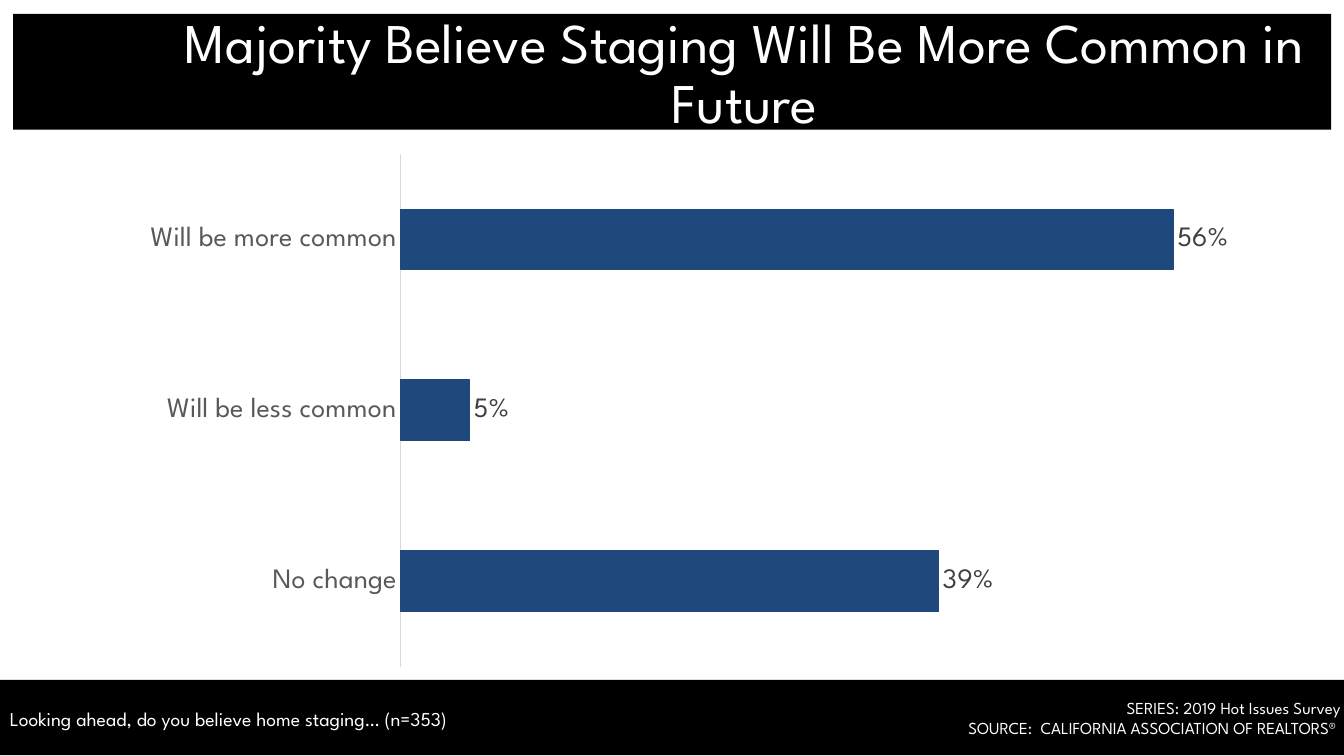
"""Build the slide on the future of home staging."""
from lxml import etree
from pptx import Presentation
from pptx.chart import data
from pptx.dml.color import RGBColor
from pptx.enum import chart as ch, shapes, text
from pptx.util import Cm, Pt

FONT = "League Spartan"
HUES = {"band": "000000", "text": "FFFFFF", "bar": "1F497D",
        "cat": "595959", "label": "404040", "axis": "D9D9D9"}


def hue(name):
    return RGBColor.from_string(HUES[name])


def write(frame, lines, size, align, wrap=True, fit=text.MSO_AUTO_SIZE.SHAPE_TO_FIT_TEXT,
          space=None):
    frame.word_wrap = wrap
    frame.auto_size = fit
    frame.vertical_anchor = text.MSO_ANCHOR.TOP
    frame.text = lines
    for para in frame.paragraphs:
        para.alignment = align
        para.line_spacing = space
        para.font.name = FONT
        para.font.size = Pt(size)
        para.font.color.rgb = hue("text")


deck = Presentation()
deck.slide_width, deck.slide_height = Cm(33.87), Cm(19.05)
slide = deck.slides.add_slide(deck.slide_layouts[5])
tree = slide.shapes

title = tree.title
title.left, title.top, title.width, title.height = Cm(4.32), Cm(0.25), Cm(28.88), Cm(1.7)
write(title.text_frame, "Majority Believe Staging Will Be More Common in Future", 40,
      text.PP_ALIGN.CENTER, fit=text.MSO_AUTO_SIZE.NONE, space=0.9)

for left, top, width, height in [(0, 17.13, 33.87, 1.9), (0.33, 0.35, 33.22, 2.92)]:
    band = tree.add_shape(shapes.MSO_SHAPE.RECTANGLE, Cm(left), Cm(top), Cm(width), Cm(height))
    band.shadow.inherit = False
    band.fill.solid()
    band.fill.fore_color.rgb = hue("band")
    band.line.fill.background()
    title.element.addprevious(band.element)

source = tree.add_textbox(Cm(22.76), Cm(17.45), Cm(11.28), Cm(1.27))
write(source.text_frame,
      "SERIES: 2019 Hot Issues Survey\nSOURCE:  CALIFORNIA ASSOCIATION OF REALTORS® ",
      12, text.PP_ALIGN.RIGHT, wrap=False)

query = tree.add_textbox(Cm(0), Cm(17.7), Cm(13.87), Cm(0.86))
write(query.text_frame, "Looking ahead, do you believe home staging… (n=353)", 14,
      text.PP_ALIGN.LEFT)

votes = data.CategoryChartData(number_format="0%")
votes.categories = ["Will be more common", "Will be less common", "No change"]
votes.add_series("Series 1", [0.56, 0.05, 0.39])
chart = tree.add_chart(ch.XL_CHART_TYPE.BAR_CLUSTERED, Cm(3.25), Cm(3.61),
                       Cm(28.19), Cm(13.46), votes).chart
chart.has_legend = False
chart.has_title = False
chart.font.name = FONT
chart.font.size = Pt(12)

cats = chart.category_axis
cats.reverse_order = True
cats.major_tick_mark = ch.XL_TICK_MARK.NONE
cats.format.line.color.rgb = hue("axis")
cats.format.line.width = Pt(0.75)
vals = chart.value_axis
vals.visible = False
vals.has_major_gridlines = False
vals.minimum_scale, vals.maximum_scale = 0, 0.6

plot = chart.plots[0]
plot.gap_width = 182
plot.vary_by_categories = False
bars = plot.series[0]
bars.format.fill.solid()
bars.format.fill.fore_color.rgb = hue("bar")
bars.format.line.color.rgb = hue("bar")
bars.format.line.width = Pt(0.75)
tags = bars.data_labels
tags.show_value = True
tags.number_format = "0%"
tags.number_format_is_linked = False
tags.position = ch.XL_LABEL_POSITION.OUTSIDE_END
for font, name in [(cats.tick_labels.font, "cat"), (tags.font, "label")]:
    font.name = FONT
    font.size = Pt(20)
    font.color.rgb = hue(name)

area = plot._element.getparent()
space = "{" + area.nsmap["c"] + "}"
for old in area.findall(space + "layout"):
    area.remove(old)
layout = etree.Element(space + "layout")
area.insert(0, layout)
manual = etree.SubElement(layout, space + "manualLayout")
for tag, val in [("layoutTarget", "inner"), ("xMode", "edge"), ("yMode", "edge"),
                 ("x", "0.243"), ("y", "0.02"), ("w", "0.74"), ("h", "0.96")]:
    etree.SubElement(manual, space + tag, val=val)

deck.save("out.pptx")
